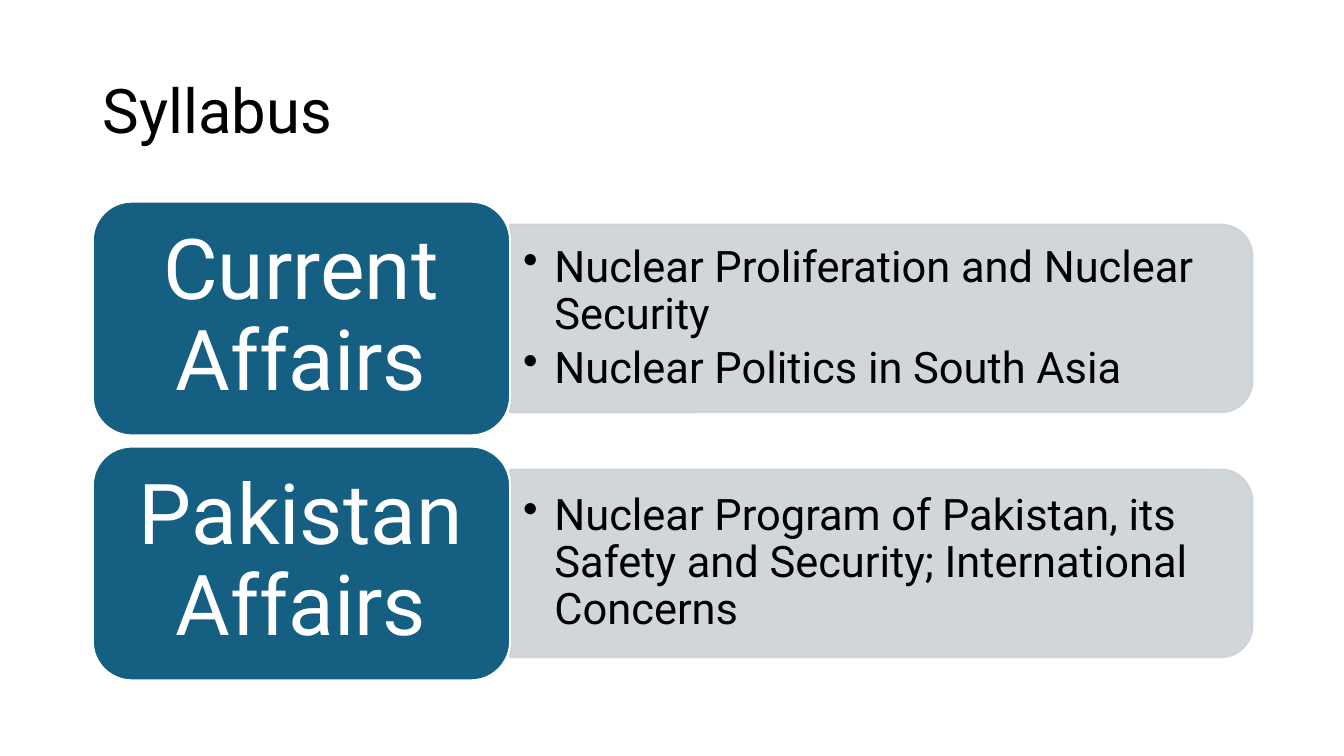
import pptx
import pptx.util
import pptx.dml.color
import pptx.enum.shapes
import pptx.enum.text
import pptx.oxml
from lxml import etree
from pptx.util import Inches

COLOURS = {"title": "000000", "body": "000000", "label": "FFFFFF",
           "block": "156082", "panel": "CCD2D8", "edge": "FFFFFF"}
SHAPES = pptx.enum.shapes.MSO_SHAPE
ALIGN = pptx.enum.text.PP_ALIGN
TEXT_FORMATS = {
    "title": {"size": 44, "align": ALIGN.LEFT, "after": 0, "insets": (0.1, 0.05)},
    "label": {"size": 60, "align": ALIGN.CENTER, "after": 0, "insets": (0.25, 0.12)},
    "body": {"size": 31, "align": ALIGN.LEFT, "after": 5, "insets": (0.13, 0.06)},
}
SECTIONS = [
    ("Current Affairs", ["Nuclear Proliferation and Nuclear Security",
                         "Nuclear Politics in South Asia"]),
    ("Pakistan Affairs", ["Nuclear Program of Pakistan, its Safety and Security; "
                          "International Concerns"]),
]
LEFT, TOP, PITCH = 0.92, 2, 2.43
BLOCK_WIDTH, BLOCK_HEIGHT = 4.14, 2.32
PANEL_WIDTH, PANEL_HEIGHT = 7.36, 1.86


def colour(name):
    return pptx.dml.color.RGBColor.from_string(COLOURS[name])


def set_values(target, values):
    for name, value in values.items():
        setattr(target, name, value)


def add_bullet(paragraph):
    properties = paragraph._p.get_or_add_pPr()
    set_indent = {"marL": Inches(0.31), "indent": -Inches(0.31)}
    for name, value in set_indent.items():
        properties.set(name, str(value))
    bullet = etree.SubElement(properties, pptx.oxml.ns.qn("a:buChar"))
    bullet.set("char", "•")


def add_text(slide, box, lines, kind, bulleted=False):
    style = TEXT_FORMATS[kind]
    horizontal, vertical = map(Inches, style["insets"])
    frame = slide.shapes.add_textbox(*map(Inches, box)).text_frame
    set_values(frame, {
        "word_wrap": True, "vertical_anchor": pptx.enum.text.MSO_ANCHOR.MIDDLE,
        "margin_left": horizontal, "margin_right": horizontal,
        "margin_top": vertical, "margin_bottom": vertical})
    frame.text = "\n".join(lines)
    for paragraph in frame.paragraphs:
        set_values(paragraph, {"alignment": style["align"], "line_spacing": 0.9,
                               "space_after": pptx.util.Pt(style["after"])})
        font = paragraph.runs[0].font
        set_values(font, {"name": "Roboto", "size": pptx.util.Pt(style["size"])})
        font.color.rgb = colour(kind)
        if bulleted:
            add_bullet(paragraph)


def add_box(slide, preset, box, fill, line, rotation=0, opacity=100):
    shape = slide.shapes.add_shape(preset, *map(Inches, box))
    shape.rotation = rotation
    shape.shadow.inherit = False
    shape.line.width = pptx.util.Pt(1.5)
    for format_fill, name in ((shape.fill, fill), (shape.line.fill, line)):
        format_fill.solid()
        format_fill.fore_color.rgb = colour(name)
    if opacity < 100:
        for element in shape._element.spPr.iter(pptx.oxml.ns.qn("a:srgbClr")):
            alpha = etree.SubElement(element, pptx.oxml.ns.qn("a:alpha"))
            alpha.set("val", str(opacity * 1000))


def add_section(slide, top, label, topics):
    panel_left = LEFT + BLOCK_WIDTH
    middle = top + BLOCK_HEIGHT / 2
    rotated_left = panel_left + (PANEL_WIDTH - PANEL_HEIGHT) / 2
    add_box(slide, SHAPES.ROUND_2_SAME_RECTANGLE,
            (rotated_left, middle - PANEL_WIDTH / 2, PANEL_HEIGHT, PANEL_WIDTH),
            "panel", "panel", rotation=90, opacity=90)
    add_text(slide, (panel_left, middle - 0.84, 7.27, 1.68), topics, "body", bulleted=True)
    add_box(slide, SHAPES.ROUNDED_RECTANGLE,
            (LEFT, top, BLOCK_WIDTH, BLOCK_HEIGHT), "block", "edge")
    add_text(slide, (LEFT + 0.11, top + 0.11, 3.91, 2.09), [label], "label")


def main():
    presentation = pptx.Presentation()
    set_values(presentation, {"slide_width": Inches(13.33), "slide_height": Inches(7.5)})
    slide = presentation.slides.add_slide(presentation.slide_layouts[6])
    add_text(slide, (LEFT, 0.4, 11.5, 1.45), ["Syllabus"], "title")
    for index, (label, topics) in enumerate(SECTIONS):
        add_section(slide, TOP + index * PITCH, label, topics)
    presentation.save("out.pptx")


if __name__ == "__main__":
    main()
